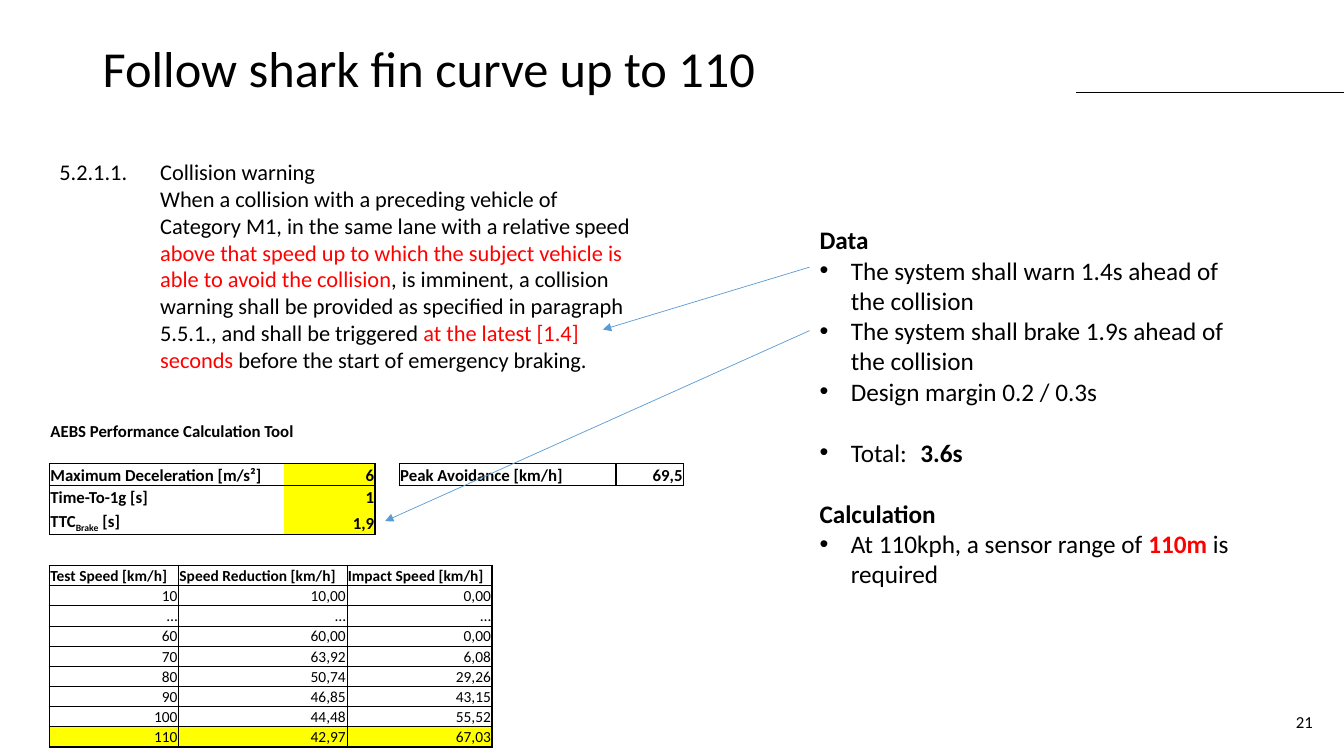
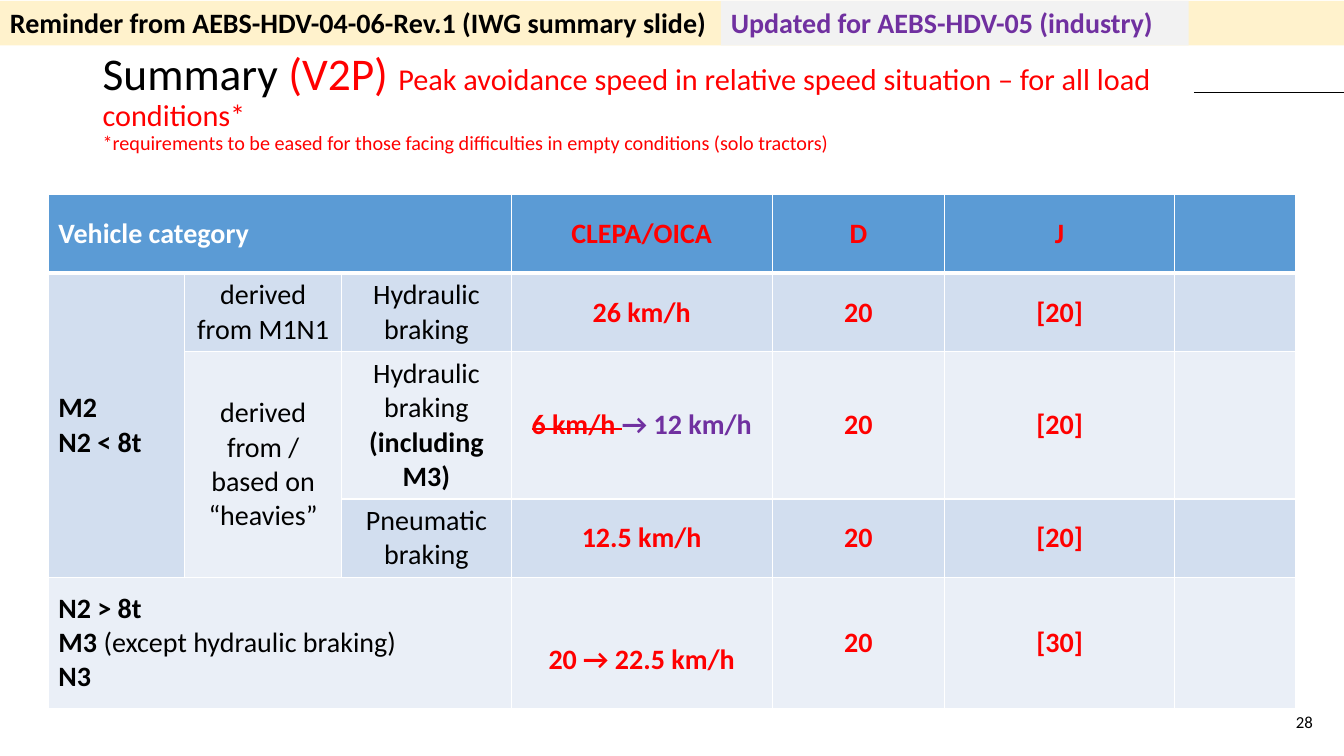
from dataclasses import dataclass

from lxml import etree
from pptx import Presentation
from pptx import util as u
from pptx.dml.color import RGBColor
from pptx.enum import shapes, text
from pptx.oxml.ns import qn


@dataclass(frozen=True)
class Theme:
    font: str = "Calibri"
    ink: str = "000000"
    paper: str = "FFFFFF"
    alert: str = "FF0000"
    update: str = "7030A0"
    marker: str = "FFFF00"
    accent: str = "5B9BD5"
    row_dark: str = "D2DEEF"
    row_light: str = "EAEFF7"
    reminder_band: str = "FFF2CC"
    update_band: str = "F2F2F2"
    title: float = 36
    long_title: float = 32.4
    subtitle: float = 21.6
    remark: float = 14.4
    large: float = 20
    body: float = 18
    clause: float = 16
    small: float = 12
    tiny: float = 11


T = Theme()
LEFT, CENTER, RIGHT = text.PP_ALIGN.LEFT, text.PP_ALIGN.CENTER, text.PP_ALIGN.RIGHT
NO_STYLE = "{2D5ABB26-0587-4C30-8999-92F81FD0307C}"
SIDES = "LRTB"


def rgb(color):
    return RGBColor.from_string(color)


# --- Text ---

def write(frame, *runs, size=T.body, color=T.ink, bold=False, align=LEFT,
          indent=0, bullet=None, before=0, spacing=None):
    """Add a paragraph; each run is a string or (string, its own format)."""
    paragraph = frame.paragraphs[0]
    if paragraph.runs:
        paragraph = frame.add_paragraph()
    paragraph.alignment = align
    paragraph.space_before = u.Pt(before)
    if spacing:
        paragraph.line_spacing = spacing
    props = paragraph._p.get_or_add_pPr()
    if indent:
        props.set("marL", str(u.Inches(indent)))
        props.set("indent", str(-u.Inches(indent) if bullet else 0))
    if bullet:
        etree.SubElement(props, qn("a:buFont"), typeface="Arial")
        etree.SubElement(props, qn("a:buChar"), char=bullet)
    for run in runs:
        if run == "\n":
            paragraph.add_line_break()
            continue
        words, own = (run, {}) if isinstance(run, str) else run
        piece = paragraph.add_run()
        piece.text = words
        piece.font.name = T.font
        piece.font.size = u.Pt(own.get("size", size))
        piece.font.bold = own.get("bold", bold)
        piece.font.color.rgb = rgb(own.get("color", color))
        for attribute in ("strike", "baseline"):
            if attribute in own:
                piece._r.get_or_add_rPr().set(attribute, own[attribute])


def add_text_area(slide, left, top, width, height, anchor=text.MSO_ANCHOR.TOP):
    area = slide.shapes.add_textbox(*map(u.Inches, (left, top, width, height)))
    area.text_frame.word_wrap = True
    area.text_frame.vertical_anchor = anchor
    return area.text_frame


# --- Shapes and lines ---

def add_band(slide, left, width, fill, words, color):
    band = slide.shapes.add_shape(shapes.MSO_SHAPE.RECTANGLE,
                                  *map(u.Inches, (left, 0.01, width, 0.44)))
    band.shadow.inherit = False
    band.fill.solid()
    band.fill.fore_color.rgb = rgb(fill)
    band.line.fill.background()
    band.text_frame.vertical_anchor = text.MSO_ANCHOR.TOP
    write(band.text_frame, words, size=T.large, color=color, bold=True)


def add_line(slide, start, end, color, arrow=False):
    line = slide.shapes.add_connector(shapes.MSO_CONNECTOR.STRAIGHT,
                                      *map(u.Inches, start + end))
    line.line.color.rgb = rgb(color)
    line.line.width = u.Pt(0.5)
    if arrow:
        etree.SubElement(line.line._get_or_add_ln(), qn("a:tailEnd"), type="triangle")
    etree.SubElement(line._element.spPr, qn("a:effectLst"))


# --- Tables ---

def add_plain_table(slide, left, top, columns, rows):
    size = (left, top, sum(columns), sum(rows))
    table = slide.shapes.add_table(len(rows), len(columns),
                                   *map(u.Inches, size)).table
    table._tbl.tblPr.find(qn("a:tableStyleId")).text = NO_STYLE
    table.first_row = table.horz_banding = False
    for column, width in zip(table.columns, columns):
        column.width = u.Inches(width)
    for row, height in zip(table.rows, rows):
        row.height = u.Inches(height)
    return table


def fill_cell(cell, fill=None):
    if fill:
        cell.fill.solid()
        cell.fill.fore_color.rgb = rgb(fill)
    else:
        cell.fill.background()


def draw_edges(cell, sides, width, color=T.ink):
    props = cell._tc.get_or_add_tcPr()
    for side in sides:
        old = props.find(qn(f"a:ln{side}"))
        if old is not None:
            props.remove(old)
        earlier = SIDES[:SIDES.index(side)]
        place = sum(props.find(qn(f"a:ln{s}")) is not None for s in earlier)
        edge = etree.Element(qn(f"a:ln{side}"), w=str(u.Pt(width)))
        paint = etree.SubElement(edge, qn("a:solidFill"))
        etree.SubElement(paint, qn("a:srgbClr"), val=color)
        props.insert(place, edge)


def outline(table, top, left, bottom, right):
    """Draw a 1 pt frame round a block of cells, limits included."""
    for row in range(top, bottom + 1):
        draw_edges(table.cell(row, left), "L", 1)
        draw_edges(table.cell(row, right), "R", 1)
    for column in range(left, right + 1):
        draw_edges(table.cell(top, column), "T", 1)
        draw_edges(table.cell(bottom, column), "B", 1)


def add_sheet(slide, top, columns, rows, content, size):
    """Add a table with tight, bottom-aligned cells as in a spreadsheet."""
    table = add_plain_table(slide, 0.49, top, columns, rows)
    for r, line in enumerate(content):
        for c, (runs, fmt) in enumerate(line):
            cell = table.cell(r, c)
            cell.margin_left = cell.margin_right = cell.margin_top = u.Inches(0.01)
            cell.margin_bottom = 0
            cell.vertical_anchor = text.MSO_ANCHOR.BOTTOM
            fill_cell(cell, fmt.get("fill"))
            if runs:
                write(cell.text_frame, *runs, size=size, bold=fmt.get("bold", False),
                      align=fmt.get("align", LEFT))
            else:
                etree.SubElement(cell.text_frame.paragraphs[0]._p,
                                 qn("a:endParaRPr"), sz=str(size * 100))
    return table


# --- Slides ---

def start_slide(deck, number, title_top, title, title_size, rule_left):
    slide = deck.slides.add_slide(deck.slide_layouts[6])
    write(add_text_area(slide, 0.92, title_top, 11.5, 1.14), *title,
          size=title_size, spacing=0.9)
    write(add_text_area(slide, 10.12, 6.96, 3, 0.4, text.MSO_ANCHOR.MIDDLE),
          number, size=T.small, align=RIGHT)
    add_line(slide, (rule_left, 0.92), (13.33, 0.92), T.ink)
    return slide


def build_curve_slide(deck):
    slide = start_slide(deck, "21", 0.39, ["Follow shark fin curve up to 110"],
                        T.title, 10.67)

    # Calculation tool: settings and peak avoidance
    empty = ([], {})

    def label(*runs):
        return runs, {"bold": True}

    def setting(value, fill=T.marker):
        return [value], {"bold": True, "align": RIGHT, "fill": fill}

    tool = [
        [label("AEBS Performance Calculation Tool")] + [empty] * 4,
        [empty] * 5,
        [label("Maximum Deceleration [m/s²]"), setting("6"), empty,
         label("Peak Avoidance [km/h]"), setting("69,5", None)],
        [label("Time-To-1g [s]"), setting("1")] + [empty] * 3,
        [label("TTC", ("Brake", {"baseline": "-25000"}), " [s]"), setting("1,9")]
        + [empty] * 3,
    ]
    settings = add_sheet(slide, 4.17, [2.33, 0.9, 0.24, 2.15, 0.67],
                         [0.21, 0.22, 0.22, 0.22, 0.26], tool, T.small)
    settings.cell(0, 0).merge(settings.cell(0, 1))
    outline(settings, 2, 0, 4, 1)
    outline(settings, 2, 3, 2, 4)

    # Speed results, the last row highlighted
    results = [
        ("10", "10,00", "0,00"), ("…", "…", "…"), ("60", "60,00", "0,00"),
        ("70", "63,92", "6,08"), ("80", "50,74", "29,26"), ("90", "46,85", "43,15"),
        ("100", "44,48", "55,52"), ("110", "42,97", "67,03"),
    ]
    speeds = [[label(f"{name} [km/h]")
               for name in ("Test Speed", "Speed Reduction", "Impact Speed")]]
    for values in results:
        fill = T.marker if values is results[-1] else None
        speeds.append([([value], {"align": RIGHT, "fill": fill}) for value in values])
    speed_table = add_sheet(slide, 5.61, [1.28, 1.67, 1.44], [0.2] * len(speeds),
                            speeds, T.tiny)
    for cell in speed_table.iter_cells():
        draw_edges(cell, SIDES, 0.5)
    outline(speed_table, 0, 0, len(speeds) - 1, 2)

    # Regulation clause
    red = {"color": T.alert}
    clause = add_text_area(slide, 0.49, 1.52, 5.99, 2.26)
    write(clause, "5.2.1.1. \tCollision warning", size=T.clause)
    write(clause,
          "When a collision with a preceding vehicle of Category M1, in the same lane "
          "with a relative speed ",
          ("above that speed up to which the subject vehicle is able to avoid the "
           "collision", red),
          ", is imminent, a collision warning shall be provided as specified in "
          "paragraph 5.5.1., and shall be triggered ",
          ("at the latest [1.4] seconds ", red),
          "before the start of emergency braking.", size=T.clause, indent=1)

    # Data and calculation
    bullet = {"bullet": "•", "indent": 0.31}
    gap = 22
    data = add_text_area(slide, 8.03, 2.18, 4.39, 3.74)
    write(data, "Data", bold=True)
    write(data, "The system shall warn 1.4s ahead of the collision", **bullet)
    write(data, "The system shall brake 1.9s ahead of the collision", **bullet)
    write(data, "Design margin 0.2 / 0.3s", **bullet)
    write(data, "Total:\t", ("3.6s", {"bold": True}), before=gap, **bullet)
    write(data, "Calculation", bold=True, before=gap)
    write(data, "At 110kph, a sensor range of ",
          ("110m ", {"color": T.alert, "bold": True}), "is required", **bullet)

    # Arrows from the data to its sources
    add_line(slide, (8.03, 2.65), (5.98, 3.27), T.accent, arrow=True)
    add_line(slide, (8.03, 3.28), (3.82, 5.17), T.accent, arrow=True)


def build_summary_slide(deck):
    red = {"color": T.alert}
    title = ["Summary ", ("(V2P) ", red),
             ("Peak avoidance speed in relative speed situation – for all load "
              "conditions* ", {**red, "size": T.subtitle}), "\n",
             ("*requirements to be eased for those facing difficulties in empty "
              "conditions (solo tractors)", {**red, "size": T.remark})]
    slide = start_slide(deck, "28", 0.46, title, T.long_title, 11.84)
    add_band(slide, 0, 13.33, T.reminder_band,
             "Reminder from AEBS-HDV-04-06-Rev.1 (IWG summary slide)", T.ink)
    add_band(slide, 7.15, 4.64, T.update_band,
             "Updated for AEBS-HDV-05 (industry)", T.update)

    # Grid of the category table
    table = add_plain_table(slide, 0.48, 1.93,
                            [1.35, 1.56, 1.68, 2.59, 1.71, 2.28, 1.2],
                            [0.78, 0.78, 1.46, 0.78, 1.3])
    row_fills = [T.accent, T.row_dark, T.row_light, T.row_dark, T.row_light]
    for r, fill in enumerate(row_fills):
        for c in range(len(table.columns)):
            cell = table.cell(r, c)
            fill_cell(cell, fill)
            draw_edges(cell, SIDES, 1, T.paper)
            if r == 0:
                draw_edges(cell, "B", 3, T.paper)
            cell.vertical_anchor = text.MSO_ANCHOR.MIDDLE
    for first, last in [((0, 0), (0, 2)), ((1, 0), (3, 0)), ((2, 1), (3, 1)),
                        ((4, 0), (4, 2))]:
        table.cell(*first).merge(table.cell(*last))

    def put(row, column, *paragraphs, **fmt):
        for runs in paragraphs:
            write(table.cell(row, column).text_frame, *runs, size=T.large, **fmt)

    # Vehicle categories
    strong = {"bold": True}
    put(0, 0, ["Vehicle category"], color=T.paper, bold=True)
    put(1, 0, ["M2"], ["N2 < 8t"], bold=True)
    put(4, 0, ["N2 > 8t"], ["M3 ", ("(except hydraulic braking)", {"bold": False})],
        ["N3"], bold=True)
    put(1, 1, ["derived from M1N1"], align=CENTER)
    put(2, 1, ["derived from / based on “heavies”"], align=CENTER)
    put(1, 2, ["Hydraulic braking"], align=CENTER)
    put(2, 2, ["Hydraulic braking"], [("(including M3)", strong)], align=CENTER)
    put(3, 2, ["Pneumatic braking"], align=CENTER)

    # Proposed speeds
    revised = [("6 km/h ", {"strike": "sngStrike"}), ("→ 12 km/h", {"color": T.update})]
    proposals = [
        (["CLEPA/OICA"], ["D"], ["J"]),
        (["26 km/h"], ["20"], ["[20]"]),
        (revised, ["20"], ["[20]"]),
        (["12.5 km/h"], ["20"], ["[20]"]),
        (["20 → 22.5 km/h"], ["20"], ["[30]"]),
    ]
    for r, row in enumerate(proposals):
        for c, runs in enumerate(row, start=3):
            put(r, c, runs, color=T.alert, bold=True, align=CENTER)
    table.cell(4, 3).margin_top = u.Inches(0.39)


def main():
    deck = Presentation()
    deck.slide_width, deck.slide_height = u.Inches(13.33), u.Inches(7.5)
    build_curve_slide(deck)
    build_summary_slide(deck)
    deck.save("out.pptx")


if __name__ == "__main__":
    main()
